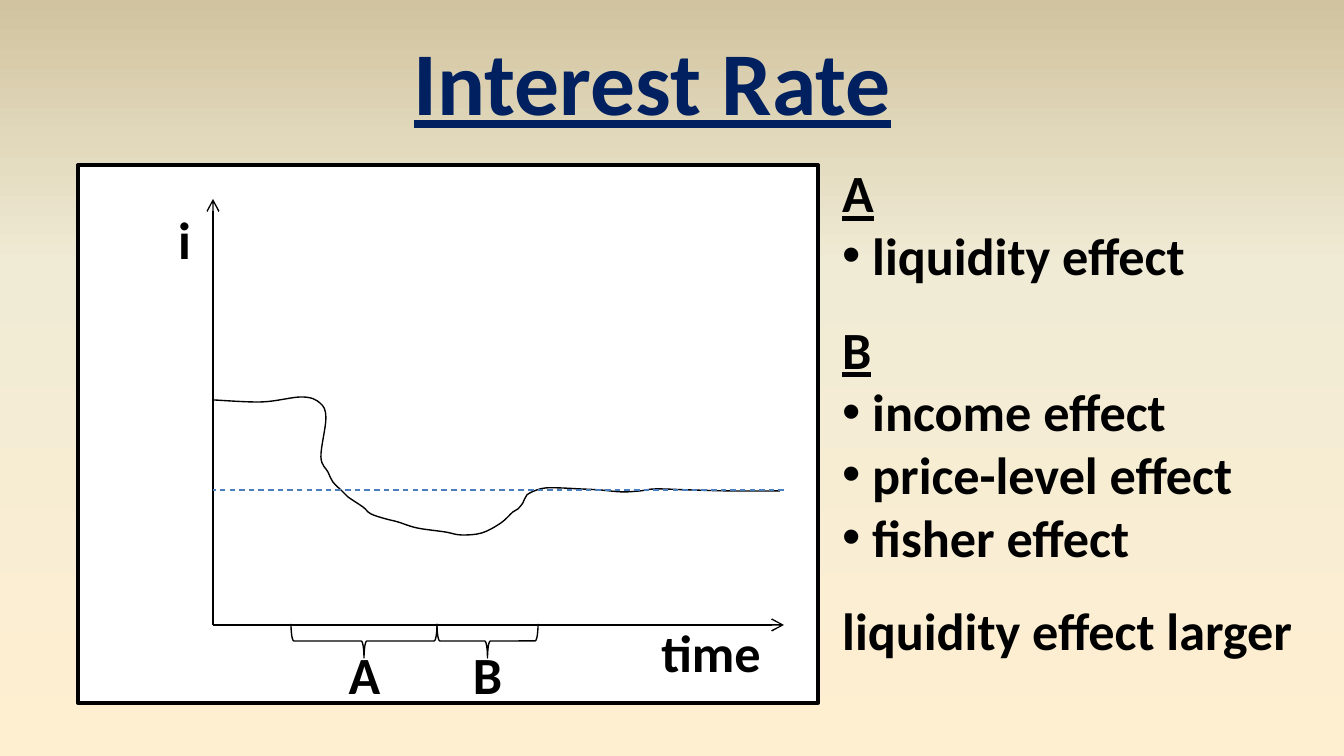
from copy import deepcopy

from pptx import Presentation
from pptx.dml.color import RGBColor
from pptx.enum.dml import MSO_LINE
from pptx.enum.shapes import MSO_CONNECTOR, MSO_SHAPE
from pptx.enum.text import PP_ALIGN
from pptx.oxml.ns import qn
from pptx.oxml.xmlchemy import OxmlElement
from pptx.util import Pt

STRAIGHT = MSO_CONNECTOR.STRAIGHT
RECTANGLE, LEFT_BRACE = MSO_SHAPE.RECTANGLE, MSO_SHAPE.LEFT_BRACE
DASH = MSO_LINE.DASH
LEFT, CENTER = PP_ALIGN.LEFT, PP_ALIGN.CENTER

WIDTH, HEIGHT = 1344, 756
SCALE = 9144000 / WIDTH
BLACK, WHITE, NAVY, BLUE = "000000", "FFFFFF", "002060", "4B7EBC"
BACKGROUND = [(0, "FFEFD1"), (0.65, "F0EBD5"), (1, "D1C39F")]

ORIGIN_X, ORIGIN_Y = 213, 625
AXIS_TOP, AXIS_RIGHT = 199, 784
NEW_RATE_Y = 490
PERIODS = [("A", 291, 437), ("B", 437, 538)]
RATE_KNOTS = [
    (213, 400), (262, 402), (302, 397), (320, 403), (326, 418), (321, 457),
    (328, 472), (333, 482), (342, 491), (348, 497), (363, 507), (371, 514),
    (386, 519), (398, 522), (417, 528), (445, 532), (461, 535), (482, 533),
    (501, 523), (513, 512), (518, 509), (523, 503), (527, 495), (537, 490),
    (546, 488), (560, 488), (580, 489), (600, 490), (622, 492), (640, 491),
    (656, 489), (690, 490), (730, 491), (780, 491),
]
GAP = 16.5
NOTES = [
    ("A", {"underline": True}),
    ("liquidity effect", {"bullet": True}),
    ("B", {"underline": True, "before": GAP}),
    ("income effect", {"bullet": True}),
    ("price-level effect", {"bullet": True}),
    ("fisher effect", {"bullet": True}),
    ("liquidity effect larger", {"before": GAP}),
]


def emu(px):
    return round(px * SCALE)


def rgb(value):
    return RGBColor.from_string(value)


def add_element(parent, tag, **attributes):
    child = OxmlElement(tag)
    for name, value in attributes.items():
        child.set(name, str(value))
    parent.append(child)
    return child


def round_corners(outline):
    """Turn the line segments of an open outline into Bezier segments."""
    points = [(int(point.get("x")), int(point.get("y")))
              for point in outline.iter(qn("a:pt"))]
    padded = [points[0], *points, points[-1]]
    segments = list(outline.iter(qn("a:lnTo")))
    for segment, a, b, c, d in zip(segments, padded, padded[1:], padded[2:], padded[3:]):
        leave = [q + (r - p) // 6 for p, q, r in zip(a, b, c)]
        arrive = [q - (r - p) // 6 for p, q, r in zip(b, c, d)]
        bend = OxmlElement("a:cubicBezTo")
        for x, y in (leave, arrive, c):
            add_element(bend, "a:pt", x=x, y=y)
        segment.getparent().replace(segment, bend)


def write(para, text, size=28, color=BLACK, underline=False, align=LEFT,
          bullet=False, before=0):
    para.alignment = align
    para.space_before = Pt(before)
    span = para.add_run()
    span.text = text
    font = span.font
    font.name, font.size, font.bold = "Calibri", Pt(size), True
    font.underline = underline
    font.color.rgb = rgb(color)
    if bullet:
        properties = para._p.get_or_add_pPr()
        properties.set("marL", str(emu(30)))
        properties.set("indent", str(-emu(30)))
        add_element(properties, "a:buFont", typeface="Arial")
        add_element(properties, "a:buChar", char="•")


class Canvas:
    def __init__(self, page, line_width=0.75):
        self.page = page
        self.shapes = page.shapes
        self.line_width = line_width

    def start_group(self):
        self.shapes = self.page.shapes.add_group_shape().shapes

    def end_group(self):
        self.shapes = self.page.shapes

    def background(self, stops):
        fill = self.page.background.fill
        fill.gradient()
        fill.gradient_angle = 90
        stop_list = self.page._element.find(".//" + qn("a:gsLst"))
        stop_list.append(deepcopy(stop_list[-1]))
        for stop, (position, color) in zip(fill.gradient_stops, stops):
            stop.position = position
            stop.color.rgb = rgb(color)

    def style(self, shape, fill=None, width=None):
        shape.shadow.inherit = False
        if fill:
            shape.fill.solid()
            shape.fill.fore_color.rgb = rgb(fill)
        else:
            shape.fill.background()
        shape.line.color.rgb = rgb(BLACK)
        shape.line.width = Pt(width or self.line_width)

    def frame(self, left, top, width, height):
        box = self.shapes.add_shape(RECTANGLE, *map(emu, (left, top, width, height)))
        self.style(box, fill=WHITE, width=2)

    def line(self, start, end, color=BLACK, dashed=False, arrow=False):
        line = self.shapes.add_connector(STRAIGHT, *map(emu, (*start, *end)))
        line.line.color.rgb = rgb(color)
        line.line.width = Pt(self.line_width)
        if dashed:
            line.line.dash_style = DASH
        if arrow:
            add_element(line.line._get_or_add_ln(), "a:tailEnd", type="arrow")
        add_element(line._element.spPr, "a:effectLst")

    def curve(self, knots):
        first, *rest = [tuple(map(emu, knot)) for knot in knots]
        builder = self.shapes.build_freeform(*first)
        builder.add_line_segments(rest, close=False)
        curve = builder.convert_to_shape()
        round_corners(curve._element.spPr)
        self.style(curve)

    def brace_below(self, left, right, top, depth=34):
        """Draw a brace that opens upward, by turning a left brace."""
        span = right - left
        box = (left + (span - depth) / 2, top + (depth - span) / 2, depth, span)
        brace = self.shapes.add_shape(LEFT_BRACE, *map(emu, box))
        brace.rotation = 270
        self.style(brace)

    def text(self, left, top, width, height, paragraphs, wrap=True, **style):
        box = self.shapes.add_textbox(*map(emu, (left, top, width, height)))
        frame = box.text_frame
        frame.word_wrap = wrap
        for index, (words, own) in enumerate(paragraphs):
            para = frame.add_paragraph() if index else frame.paragraphs[0]
            write(para, words, **{**style, **own})

    def label(self, left, top, width, words):
        self.text(left, top, width, 77, [(words, {})], align=CENTER)


def main():
    deck = Presentation()
    deck.slide_width, deck.slide_height = emu(WIDTH), emu(HEIGHT)
    canvas = Canvas(deck.slides.add_slide(deck.slide_layouts[6]))
    canvas.background(BACKGROUND)

    canvas.start_group()
    canvas.frame(78, 165, 740, 538)
    origin = (ORIGIN_X, ORIGIN_Y)
    canvas.line(origin, (ORIGIN_X, AXIS_TOP), arrow=True)
    canvas.line(origin, (AXIS_RIGHT, ORIGIN_Y), arrow=True)
    canvas.label(134, 201, 101, "i")
    canvas.label(627, 614, 168, "time")
    canvas.curve(RATE_KNOTS)
    canvas.line((AXIS_RIGHT, NEW_RATE_Y), (ORIGIN_X, NEW_RATE_Y), BLUE, dashed=True)
    for name, left, right in PERIODS:
        canvas.brace_below(left, right, ORIGIN_Y - 1)
        canvas.label((left + right) // 2 - 50, 636, 101, name)
    canvas.end_group()

    canvas.text(398, 19, 509, 122, [("Interest Rate", {})], wrap=False,
                size=48, color=NAVY, underline=True, align=CENTER)
    canvas.text(829, 154, 504, 520, NOTES)
    deck.save("out.pptx")


if __name__ == "__main__":
    main()
